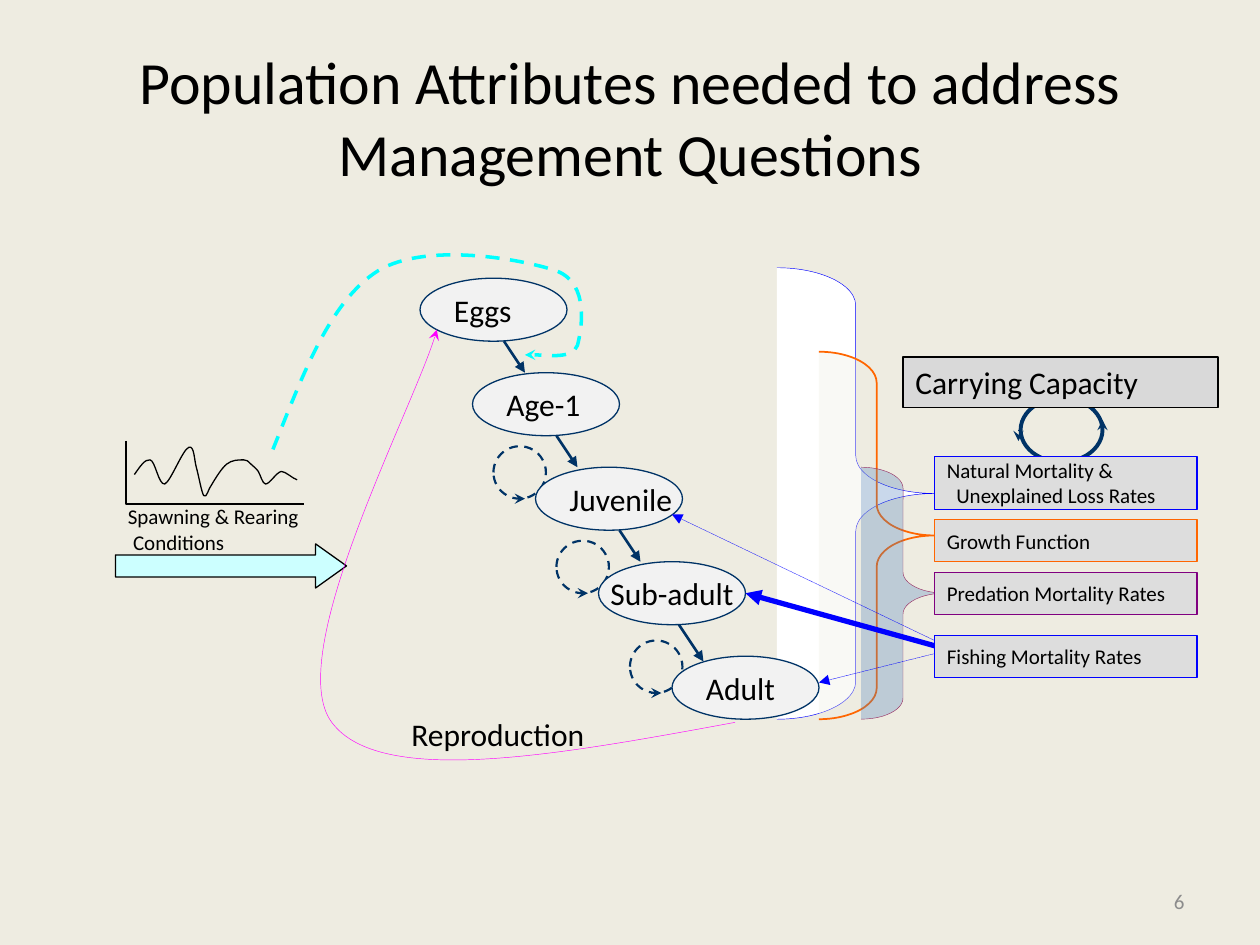
from lxml.etree import SubElement
from pptx import Presentation
from pptx.dml.color import RGBColor
from pptx.enum.dml import MSO_LINE
from pptx.enum.shapes import MSO_CONNECTOR, MSO_SHAPE
from pptx.enum.text import MSO_ANCHOR, PP_ALIGN
from pptx.oxml.ns import qn
from pptx.util import Pt

PX = 7620  # EMU per px, 120 px to the inch
FONT = "Calibri"

BLACK = RGBColor(0x00, 0x00, 0x00)
WHITE = RGBColor(0xFF, 0xFF, 0xFF)
CREAM = RGBColor(0xEE, 0xEC, 0xE1)
NAVY = RGBColor(0x00, 0x33, 0x66)
BLUE = RGBColor(0x00, 0x00, 0xFF)
STEEL = RGBColor(0x4F, 0x81, 0xBD)
ORANGE = RGBColor(0xFF, 0x66, 0x00)
PLUM = RGBColor(0x99, 0x33, 0x66)
PURPLE = RGBColor(0x80, 0x00, 0x80)
MAGENTA = RGBColor(0xFF, 0x00, 0xFF)
CYAN = RGBColor(0x00, 0xFF, 0xFF)
PALE_CYAN = RGBColor(0xCC, 0xFF, 0xFF)
STAGE_FILL = RGBColor(0xF2, 0xF2, 0xF2)
RATE_FILL = RGBColor(0xDD, 0xDD, 0xDD)
CAPACITY_FILL = RGBColor(0xD9, 0xD9, 0xD9)
GREY = RGBColor(0x8C, 0x8C, 0x8C)

STAGE_W, STAGE_H, LOOP = 140, 60, 50
STAGES = [("Eggs", 400), ("Age-1", 450), ("Juvenile", 510),
          ("Sub-adult", 570), ("Adult", 640)]
STAGE_TOP, STAGE_STEP = 265, 90
STAGE_ARROWS = [(480, 325, 500, 355), (530, 415, 550, 445),
                (590, 505, 610, 535), (630, 570, 670, 630)]
LOOPS = [(470, 425), (530, 515), (600, 610)]

# box, fill, opacity in percent, line colour, line width, curl
BRACES = [
    ((740, 255, 150, 430), WHITE, 100, BLUE, 0.25, 0.24),
    ((780, 335, 110, 350), CREAM, 31, ORANGE, 1, 0.27),
    ((820, 445, 80, 240), STEEL, 30, PLUM, 0.25, 0.25),
]
# lines of text, top, height, line colour
RATES = [
    (["Natural Mortality &", "Unexplained Loss Rates"], 435, 50, BLUE),
    (["Growth Function"], 495, 40, ORANGE),
    (["Predation Mortality Rates"], 545, 40, PURPLE),
    (["Fishing Mortality Rates"], 605, 40, BLUE),
]
FISHING_ARROWS = [((890, 615, 710, 565), 3, None),
                  ((900, 620, 780, 650), 0.25, MSO_LINE.ROUND_DOT),
                  ((890, 610, 640, 490), 0.25, MSO_LINE.ROUND_DOT)]

# Curves: a start point, then three Bezier points for each segment
REPRODUCTION = [(700, 688), (532, 719), (362, 750), (316, 688),
                (269, 625), (400, 377), (416, 314)]
CONDITIONS = [(260, 428), (288, 358), (314, 287), (360, 258),
              (406, 230), (498, 247), (530, 258), (562, 270), (554, 314),
              (550, 329), (545, 342), (509, 337), (500, 338)]
WAVE = [(128, 452), (133, 445), (138, 437), (143, 438),
        (148, 439), (151, 462), (157, 461), (163, 458), (174, 428), (180, 426),
        (185, 424), (185, 438), (187, 445), (189, 452), (192, 469), (194, 472),
        (197, 475), (198, 466), (202, 461), (205, 456), (211, 446), (216, 442),
        (221, 438), (227, 438), (232, 438), (235, 438), (236, 439), (239, 442),
        (241, 444), (244, 446), (246, 449), (248, 452), (250, 461), (253, 461),
        (257, 461), (263, 450), (268, 449), (272, 449), (279, 456), (283, 457)]
AXES = [(120, 420), (120, 480), (290, 480)]


def emu(lengths):
    return [n * PX for n in lengths]


def style_line(line, color, width, dash=None, tail=None):
    line.color.rgb = color
    line.width = Pt(width)
    if dash:
        line.dash_style = dash
    if tail:
        SubElement(line._get_or_add_ln(), qn("a:tailEnd"), type=tail)


def write(s, lines, size, color=BLACK, align=PP_ALIGN.LEFT, indent=0, **frame):
    """Fill a text frame; every line after the first is indented."""
    tf = s.text_frame
    for name, value in ({"word_wrap": False,
                         "vertical_anchor": MSO_ANCHOR.MIDDLE} | frame).items():
        setattr(tf, name, value)
    for i, text in enumerate(lines):
        p = tf.add_paragraph() if i else tf.paragraphs[0]
        p.alignment = align
        if i and indent:
            p._p.get_or_add_pPr().set("marL", str(indent * PX))
        r = p.add_run()
        r.text = text
        for name, value in {"name": FONT, "size": Pt(size)}.items():
            setattr(r.font, name, value)
        r.font.color.rgb = color


def add_label(shapes, box, lines, size, **text):
    write(shapes.add_textbox(*emu(box)), lines, size, **text)


def add_block(shapes, kind, box, fill, color, width, dash=None, alpha=100, adj=()):
    s = shapes.add_shape(kind, *emu(box))
    s.shadow.inherit = False
    for i, value in enumerate(adj):
        s.adjustments[i] = value
    if fill is None:
        s.fill.background()
    else:
        s.fill.solid()
        s.fill.fore_color.rgb = fill
        if alpha < 100:
            clr = s._element.spPr.find(qn("a:solidFill"))[0]
            SubElement(clr, qn("a:alpha"), val=str(alpha * 1000))
    style_line(s.line, color, width, dash)
    return s


def add_arrow(shapes, ends, color, width, tail, dash=None):
    c = shapes.add_connector(MSO_CONNECTOR.STRAIGHT, *emu(ends))
    style_line(c.line, color, width, dash, tail)
    SubElement(c._element.spPr, qn("a:effectLst"))


def add_outline(shapes, points, color, width, dash=None, tail=None, curved=True):
    fb = shapes.build_freeform(*points[0], scale=PX)
    fb.add_line_segments(points[1:], close=False)
    s = fb.convert_to_shape()
    s.shadow.inherit = False
    s.fill.background()
    style_line(s.line, color, width, dash, tail)
    if curved:  # merge each three line segments into one Bezier segment
        segments = list(s._element.iter(qn("a:lnTo")))
        for i in range(0, len(segments), 3):
            first, *rest = segments[i:i + 3]
            first.tag = qn("a:cubicBezTo")
            for seg in rest:
                first.append(seg[0])
                seg.getparent().remove(seg)


def add_life_cycle(shapes):
    for x, y in LOOPS:
        add_block(shapes, MSO_SHAPE.OVAL, (x, y, LOOP, LOOP), None, NAVY, 1.25,
                  MSO_LINE.DASH)
    for ends in STAGE_ARROWS:
        add_arrow(shapes, ends, NAVY, 1.5, "triangle")
    for i, (name, x) in enumerate(STAGES):
        box = (x, STAGE_TOP + i * STAGE_STEP, STAGE_W, STAGE_H)
        s = add_block(shapes, MSO_SHAPE.OVAL, box, STAGE_FILL, NAVY, 0.75)
        align = PP_ALIGN.CENTER if name == "Sub-adult" else PP_ALIGN.LEFT
        write(s, [name], 18, align=align)
    for x, y in LOOPS:
        add_arrow(shapes, (x + 20, y + LOOP, x + 30, y + LOOP), NAVY, 0.75, "stealth")


def add_spawning(shapes):
    add_outline(shapes, WAVE, BLACK, 0.75)
    add_outline(shapes, AXES, BLACK, 0.75, curved=False)
    add_block(shapes, MSO_SHAPE.RIGHT_ARROW, (110, 518, 220, 42), PALE_CYAN, BLACK,
              0.75, adj=(0.5, 0.7))
    add_label(shapes, (110, 474, 190, 60), ["Spawning & Rearing", "Conditions"], 12,
              indent=5, vertical_anchor=MSO_ANCHOR.TOP)


def add_rates(shapes):
    for ends, width, dash in FISHING_ARROWS:
        add_arrow(shapes, ends, BLUE, width, "triangle", dash)
    for lines, y, h, color in RATES:
        s = add_block(shapes, MSO_SHAPE.RECTANGLE, (890, y, 250, h), RATE_FILL, color, 0.75)
        write(s, lines, 12, indent=9)
    s = add_block(shapes, MSO_SHAPE.RECTANGLE, (860, 340, 300, 48), CAPACITY_FILL, BLACK, 0.75)
    write(s, ["Carrying Capacity"], 18, word_wrap=True, vertical_anchor=MSO_ANCHOR.TOP)


def main():
    prs = Presentation()
    prs.slide_width, prs.slide_height = emu((1200, 900))
    slide = prs.slides.add_slide(prs.slide_layouts[6])
    slide.background.fill.solid()
    slide.background.fill.fore_color.rgb = CREAM
    shapes = slide.shapes

    # Title
    add_label(shapes, (60, 36, 1080, 150),
              ["Population Attributes needed to address Management Questions"],
              34.2, align=PP_ALIGN.CENTER, word_wrap=True)

    # Feedback between carrying capacity and mortality
    add_block(shapes, MSO_SHAPE.OVAL, (972, 379, 78, 61), None, NAVY, 2.25)
    for ends in [(1050, 410, 1050, 400), (970, 410, 970, 420)]:
        add_arrow(shapes, ends, NAVY, 0.75, "stealth")

    # Braces from the rates to the stages
    for box, fill, alpha, color, width, curl in BRACES:
        add_block(shapes, MSO_SHAPE.RIGHT_BRACE, box, fill, color, width,
                  alpha=alpha, adj=(curl, 0.5))

    add_life_cycle(shapes)
    add_spawning(shapes)

    # Reproduction and the effect of conditions on eggs
    add_label(shapes, (380, 675, 203, 48), ["Reproduction"], 18)
    add_outline(shapes, REPRODUCTION, MAGENTA, 0.25, tail="stealth")
    add_outline(shapes, CONDITIONS, CYAN, 2, MSO_LINE.DASH, "stealth")

    add_rates(shapes)

    # Slide number
    add_label(shapes, (860, 834, 280, 48), ["6"], 12, color=GREY,
              align=PP_ALIGN.RIGHT, word_wrap=True)
    prs.save("out.pptx")


if __name__ == "__main__":
    main()
